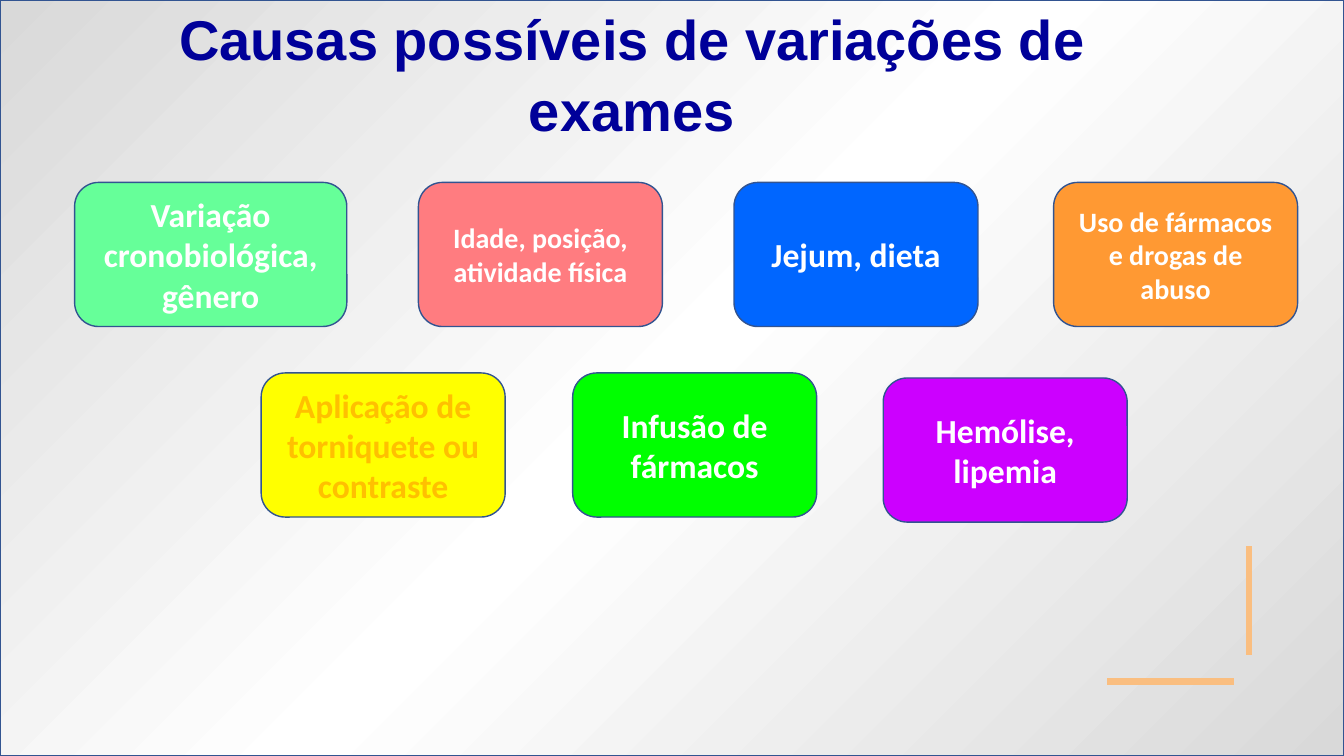
from copy import deepcopy

from lxml import etree
from pptx import Presentation
from pptx.dml.color import RGBColor
from pptx.enum.shapes import MSO_CONNECTOR, MSO_SHAPE
from pptx.enum.text import MSO_ANCHOR, PP_ALIGN
from pptx.oxml.ns import qn
from pptx.util import Inches, Pt

RECTANGLE = MSO_SHAPE.RECTANGLE
ROUNDED = MSO_SHAPE.ROUNDED_RECTANGLE
STRAIGHT = MSO_CONNECTOR.STRAIGHT
MIDDLE = MSO_ANCHOR.MIDDLE
CENTER = PP_ALIGN.CENTER

WIDTH, HEIGHT = Inches(13.33), Inches(7.5)
CARD_WIDTH, CARD_HEIGHT = 2.42, 1.43

WHITE = RGBColor(0xFF, 0xFF, 0xFF)
GRAY = RGBColor(0xD9, 0xD9, 0xD9)
NAVY = RGBColor(0x00, 0x00, 0x99)
OUTLINE = RGBColor(0x32, 0x54, 0x91)
PEACH = RGBColor(0xFA, 0xBE, 0x80)
MINT = RGBColor(0x66, 0xFF, 0x99)
CORAL = RGBColor(0xFF, 0x7C, 0x80)
BLUE = RGBColor(0x00, 0x66, 0xFF)
ORANGE = RGBColor(0xFF, 0x99, 0x33)
YELLOW = RGBColor(0xFF, 0xFF, 0x00)
GREEN = RGBColor(0x00, 0xFF, 0x00)
PURPLE = RGBColor(0xCC, 0x00, 0xFF)
AMBER = RGBColor(0xFF, 0xC0, 0x00)

TOP_ROW = [
    (0.74, 1.81, 2.7, "Variação cronobiológica, gênero", 24, MINT, WHITE),
    (4.15, 1.81, CARD_WIDTH, "Idade, posição, atividade física", 20, CORAL, WHITE),
    (7.28, 1.81, CARD_WIDTH, "Jejum, dieta", 24, BLUE, WHITE),
    (10.45, 1.81, CARD_WIDTH, "Uso de fármacos e drogas de abuso", 20, ORANGE, WHITE),
]
BOTTOM_ROW = [
    (2.59, 3.7, CARD_WIDTH, "Aplicação de torniquete ou contraste", 24, YELLOW, AMBER),
    (5.68, 3.7, CARD_WIDTH, "Infusão de fármacos", 24, GREEN, WHITE),
    (8.76, 3.75, CARD_WIDTH, "Hemólise, lipemia", 24, PURPLE, WHITE),
]


def write_text(shape, text, font_name, size, color):
    frame = shape.text_frame
    frame.word_wrap = True
    frame.vertical_anchor = MIDDLE
    paragraph = frame.paragraphs[0]
    paragraph.alignment = CENTER
    run = paragraph.add_run()
    run.text = text
    run.font.name = font_name
    run.font.size = Pt(size)
    run.font.bold = True
    run.font.color.rgb = color
    return paragraph


def add_outlined_shape(slide, kind, left, top, width, height):
    shape = slide.shapes.add_shape(kind, left, top, width, height)
    shape.shadow.inherit = False
    shape.line.color.rgb = OUTLINE
    shape.line.width = Pt(1)
    return shape


def add_backdrop(slide):
    backdrop = add_outlined_shape(slide, RECTANGLE, 0, 0, WIDTH, HEIGHT)
    fill = backdrop.fill
    fill.gradient()
    fill.gradient_angle = 315
    stop_list = backdrop._element.spPr.find(qn("a:gradFill")).find(qn("a:gsLst"))
    stop_list.append(deepcopy(stop_list[0]))
    for stop, position, color in zip(fill.gradient_stops, (0, 0.5, 1), (GRAY, WHITE, GRAY)):
        stop.position = position
        stop.color.rgb = color


def add_accent(slide, start_x, start_y, end_x, end_y):
    ends = [Inches(value) for value in (start_x, start_y, end_x, end_y)]
    accent = slide.shapes.add_connector(STRAIGHT, *ends)
    accent.line.color.rgb = PEACH
    accent.line.width = Pt(4.5)
    etree.SubElement(accent._element.spPr, qn("a:effectLst"))


def add_title(slide, left, top, width, height):
    box = slide.shapes.add_textbox(Inches(left), Inches(top), Inches(width), Inches(height))
    paragraph = write_text(box, "Causas possíveis de variações de exames", "Arial", 40, NAVY)
    paragraph.line_spacing = 1.05


def add_card(slide, left, top, width, text, size, fill_color, text_color):
    card = add_outlined_shape(
        slide, ROUNDED, Inches(left), Inches(top), Inches(width), Inches(CARD_HEIGHT)
    )
    card.fill.solid()
    card.fill.fore_color.rgb = fill_color
    write_text(card, text, "Calibri", size, text_color)


def main():
    presentation = Presentation()
    presentation.slide_width, presentation.slide_height = WIDTH, HEIGHT
    slide = presentation.slides.add_slide(presentation.slide_layouts[6])
    add_backdrop(slide)
    add_accent(slide, 10.98, 6.76, 12.24, 6.76)
    add_accent(slide, 12.39, 5.42, 12.39, 6.5)
    add_title(slide, 1.35, 0.18, 9.83, 1.07)
    for card in TOP_ROW + BOTTOM_ROW:
        add_card(slide, *card)
    presentation.save("out.pptx")


if __name__ == "__main__":
    main()
